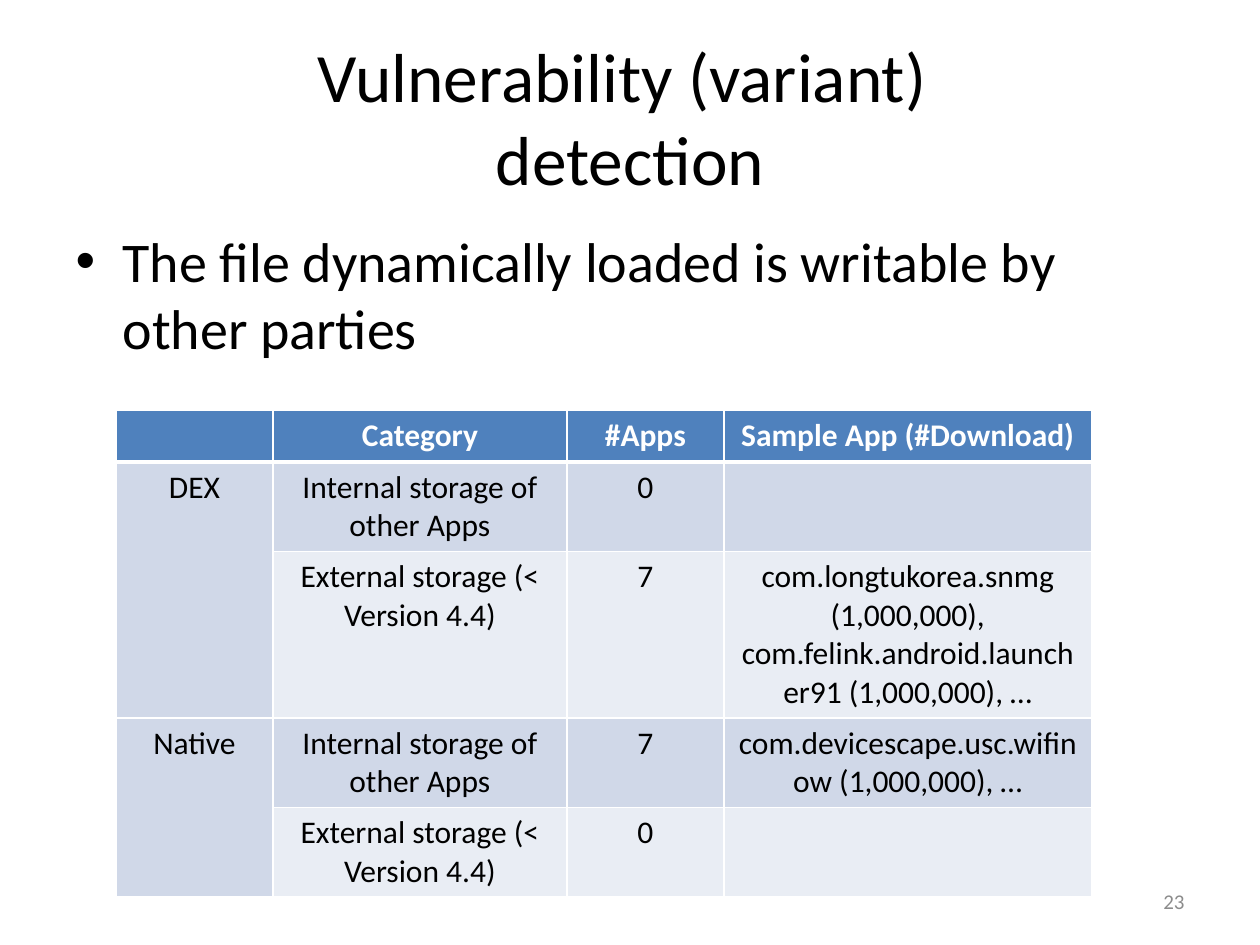
from dataclasses import dataclass
from lxml.etree import SubElement
from pptx import Presentation
from pptx.dml.color import RGBColor
from pptx.enum.text import MSO_ANCHOR, MSO_AUTO_SIZE, PP_ALIGN
from pptx.oxml import parse_xml
from pptx.oxml.ns import nsdecls, qn
from pptx.util import Emu, Pt

# Content
TITLE = ["Vulnerability (variant) ", "detection"]
POINT = "The file dynamically loaded is writable by other parties"
NUMBER = "23"
INNER = "Internal storage of other Apps"
OUTER = "External storage (< Version 4.4)"
ROWS = [
    ["", "Category", "#Apps", "Sample App (#Download)"],
    ["DEX", INNER, "0", ""],
    ["", OUTER, "7", "com.longtukorea.snmg (1,000,000), "
     "com.felink.android.launcher91 (1,000,000), …"],
    ["Native", INNER, "7", "com.devicescape.usc.wifinow (1,000,000), …"],
    ["", OUTER, "0", ""],
]
GROUPS = [(1, 2), (3, 4)]  # first and last row of each merged label

# Places in px: left, top, width, height
PAGE = (1260, 945)
HEAD = (63, 38, 1134, 157)
BODY = (63, 220, 1134, 624)
FOOT = (903, 876, 294, 50)
GRID = (116, 410)
COLS = [157, 294, 157, 368]
ROW = 52
INDENT = 47


@dataclass(frozen=True)
class Theme:
    font: str = "Calibri"
    ink: str = "000000"
    pale: str = "FFFFFF"
    gray: str = "8C8C8C"
    head: str = "4F81BD"
    bands: tuple = ("D0D8E8", "E9EDF4")
    title: float = 39.6
    body: float = 32
    cell: float = 18
    foot: float = 12


LOOK = Theme()


def px(n):
    return Emu(round(n * 914400 / 126))


def place(shape, box):
    shape.left, shape.top, shape.width, shape.height = map(px, box)


def write(para, text, size, color, align, bold=False):
    para.alignment = align
    run = para.add_run()
    run.text = text
    font = run.font
    font.name, font.size, font.bold = LOOK.font, Pt(size), bold
    font.color.rgb = RGBColor.from_string(color)


def setup(shape, box, anchor):
    place(shape, box)
    frame = shape.text_frame
    frame.word_wrap = True
    frame.auto_size = MSO_AUTO_SIZE.NONE
    frame.vertical_anchor = anchor
    return frame.paragraphs[0]


def border(cell, top, base):
    widths = {"lnL": 1, "lnR": 1, "lnT": top, "lnB": base}
    props = cell._tc.get_or_add_tcPr()
    for spot, (tag, width) in enumerate(widths.items()):
        props.insert(spot, parse_xml(
            f'<a:{tag} {nsdecls("a")} w="{Pt(width)}"><a:solidFill>'
            f'<a:srgbClr val="{LOOK.pale}"/></a:solidFill></a:{tag}>'))


deck = Presentation()
deck.slide_width, deck.slide_height = map(px, PAGE)
slide = deck.slides.add_slide(deck.slide_layouts[1])

# Title
para = setup(slide.shapes.title, HEAD, MSO_ANCHOR.MIDDLE)
for i, line in enumerate(TITLE):
    if i:
        para.add_line_break()
    write(para, line, LOOK.title, LOOK.ink, PP_ALIGN.CENTER)

# Bullet
para = setup(slide.placeholders[1], BODY, MSO_ANCHOR.TOP)
props = para._p.get_or_add_pPr()
props.set("marL", str(px(INDENT)))
props.set("indent", str(-px(INDENT)))
SubElement(props, qn("a:buFont"), typeface="Arial")
SubElement(props, qn("a:buChar"), char="•")
para.space_before = Pt(0)
write(para, POINT, LOOK.body, LOOK.ink, PP_ALIGN.LEFT)

# Slide number
para = setup(slide.shapes.add_textbox(0, 0, 0, 0), FOOT, MSO_ANCHOR.MIDDLE)
write(para, NUMBER, LOOK.foot, LOOK.gray, PP_ALIGN.RIGHT)

# Table
box = (*GRID, sum(COLS), ROW * len(ROWS))
table = slide.shapes.add_table(len(ROWS), len(COLS), *map(px, box)).table
table.horz_banding = False
for col, width in zip(table.columns, COLS):
    col.width = px(width)
for r, texts in enumerate(ROWS):
    table.rows[r].height = px(ROW)
    top = r == 0
    for c, text in enumerate(texts):
        cell = table.cell(r, c)
        band = 0 if c == 0 else (r - 1) % 2
        cell.fill.solid()
        cell.fill.fore_color.rgb = RGBColor.from_string(
            LOOK.head if top else LOOK.bands[band])
        border(cell, 3 if r == 1 else 1, 3 if top else 1)
        if text:
            write(cell.text_frame.paragraphs[0], text, LOOK.cell,
                  LOOK.pale if top else LOOK.ink, PP_ALIGN.CENTER, top)
for first, last in GROUPS:
    table.cell(first, 0).merge(table.cell(last, 0))

deck.save("out.pptx")
